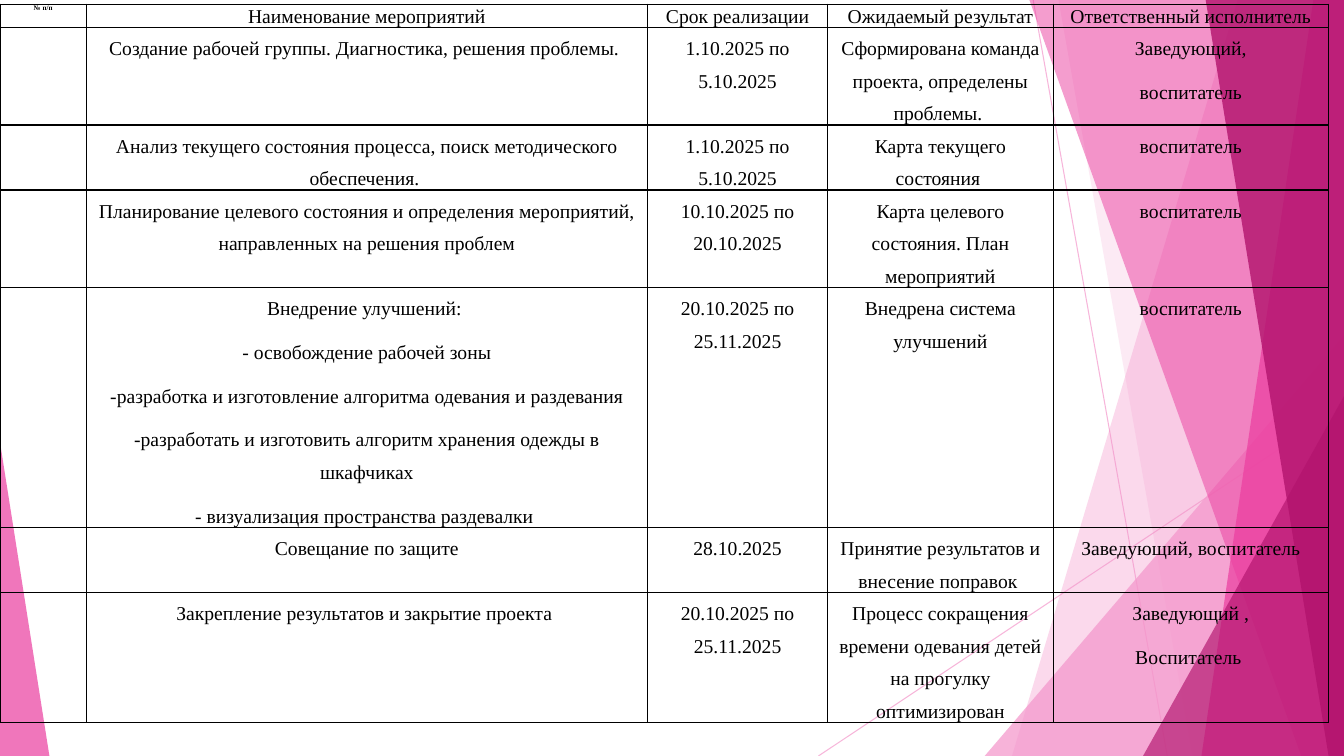
from lxml import etree
from pptx import Presentation
from pptx.dml.color import RGBColor
from pptx.enum.shapes import MSO_CONNECTOR, MSO_SHAPE
from pptx.enum.text import PP_ALIGN
from pptx.oxml.ns import qn
from pptx.util import Pt

CENTER = PP_ALIGN.CENTER
STRAIGHT = MSO_CONNECTOR.STRAIGHT
TRIANGLE = MSO_SHAPE.ISOSCELES_TRIANGLE

WIDE, HIGH, EDGE = 960, 540, -0.6
FONT = "Times New Roman"
BLACK, LIGHT, PINK, DARK = "000000", "F496CB", "EB3D9F", "B2136D"

# Table content: a tuple holds the paragraphs of one cell
HEAD = ["№ п/п", "Наименование мероприятий", "Срок реализации",
        "Ожидаемый результат", "Ответственный исполнитель"]
STEPS = [
    ["Создание рабочей группы. Диагностика, решения проблемы. ",
     "1.10.2025 по 5.10.2025",
     "Сформирована команда проекта, определены проблемы. ",
     ("Заведующий,", "воспитатель")],
    ["Анализ текущего состояния процесса, поиск методического обеспечения. ",
     "1.10.2025 по 5.10.2025", "Карта текущего состояния ", "воспитатель"],
    ["Планирование целевого состояния и определения мероприятий, "
     "направленных на решения проблем",
     "10.10.2025 по 20.10.2025",
     "Карта целевого состояния. План мероприятий", "воспитатель"],
    [("Внедрение улучшений: ",
      "- освобождение рабочей зоны",
      "-разработка и изготовление алгоритма одевания и раздевания",
      "-разработать и изготовить алгоритм хранения одежды в шкафчиках",
      "- визуализация пространства раздевалки "),
     "20.10.2025 по 25.11.2025", "Внедрена система улучшений", "воспитатель"],
    ["Совещание по защите", "28.10.2025",
     "Принятие результатов и внесение поправок ", "Заведующий, воспитатель"],
    ["Закрепление результатов и закрытие проекта ",
     "20.10.2025 по 25.11.2025",
     "Процесс сокращения времени одевания детей на прогулку оптимизирован",
     ("Заведующий ,", "Воспитатель ")],
]
COLS = [61.7, 400.8, 128.8, 161, 196.7]
ROWS = [16, 69, 46, 69, 171, 46, 92]
LEFT, TOP = 0, 3

# Backdrop, back to front
LINES = [(738, 0, 833.8, HIGH), (WIDE, 290, 584.6, HIGH)]
FACETS = [  # band: top x, bottom x; wedge: left, top, width, height, apex
    ("band", (884.2, 722.9), LIGHT, 36),
    ("band", (756, 851.8), LIGHT, 20),
    ("wedge", (703.4, 239.8, 256.6, 300.2, 1), LIGHT, 72),
    ("band", (735.1, 929.5), PINK, 50),
    ("band", (938.2, 858.2), PINK, 70),
    ("band", (861.1, 949), DARK, 80),
    ("wedge", (816.5, 283, 143.5, 257, 1), DARK, 66),
    ("wedge", (0, 316, 35.3, 224, 0), PINK, 70),
]


def paint(fill, color):
    fill.solid()
    fill.fore_color.rgb = RGBColor.from_string(color)


def fade(shape, percent):
    color = next(shape._element.spPr.iter(qn("a:srgbClr")))
    etree.SubElement(color, qn("a:alpha"), val=str(percent * 1000))


def write(cell, text, size=14, bold=False, space=1.5):
    frame = cell.text_frame
    parts = (text,) if isinstance(text, str) else text
    for i, part in enumerate(parts):
        para = frame.add_paragraph() if i else frame.paragraphs[0]
        para.alignment, para.line_spacing = CENTER, space
        para.space_after = Pt(8)
        run = para.add_run()
        run.text = part
        run.font.name, run.font.size, run.font.bold = FONT, Pt(size), bold
        paint(run.font.fill, BLACK)


def frame_cell(cell):
    cell.margin_left = cell.margin_right = Pt(2.2)
    cell.margin_top = cell.margin_bottom = 0
    props = cell._tc.get_or_add_tcPr()
    for side in ("lnL", "lnR", "lnT", "lnB"):
        line = etree.SubElement(props, qn("a:" + side), w=str(Pt(1)))
        solid = etree.SubElement(line, qn("a:solidFill"))
        etree.SubElement(solid, qn("a:srgbClr"), val=BLACK)
    cell.fill.background()


def band(shapes, top, base):
    pen = shapes.build_freeform(Pt(top), Pt(EDGE), scale=1)
    pen.add_line_segments([(Pt(WIDE), Pt(EDGE)), (Pt(WIDE), Pt(HIGH)),
                           (Pt(base), Pt(HIGH))], close=True)
    return pen.convert_to_shape()


def wedge(shapes, left, top, width, height, apex):
    shape = shapes.add_shape(TRIANGLE, Pt(left), Pt(top), Pt(width), Pt(height))
    shape.adjustments[0] = apex
    return shape


def backdrop(shapes):
    for ends in LINES:
        line = shapes.add_connector(STRAIGHT, *map(Pt, ends))
        line.line.width = Pt(0.75)
        paint(line.line.fill, LIGHT)
        fade(line, 70)
        etree.SubElement(line._element.spPr, qn("a:effectLst"))
    for kind, place, color, percent in FACETS:
        draw = band if kind == "band" else wedge
        shape = draw(shapes, *place)
        shape.shadow.inherit = False
        shape.line.fill.background()
        paint(shape.fill, color)
        fade(shape, percent)


def plan(shapes):
    grid = shapes.add_table(len(ROWS), len(COLS), Pt(LEFT), Pt(TOP),
                            Pt(sum(COLS)), Pt(sum(ROWS))).table
    grid.first_row = grid.horz_banding = False
    for col, width in zip(grid.columns, COLS):
        col.width = Pt(width)
    for row, height in zip(grid.rows, ROWS):
        row.height = Pt(height)
    for cell in grid.iter_cells():
        frame_cell(cell)
    for c, text in enumerate(HEAD):
        look = {"size": 5, "bold": True} if c == 0 else {}
        write(grid.cell(0, c), text, space=1.07, **look)
    for r, step in enumerate(STEPS, 1):
        for c, text in enumerate(step, 1):
            write(grid.cell(r, c), text)


def main():
    deck = Presentation()
    deck.slide_width, deck.slide_height = Pt(WIDE), Pt(HIGH)
    slide = deck.slides.add_slide(deck.slide_layouts[6])
    paint(slide.background.fill, "FFFFFF")
    backdrop(slide.shapes)
    plan(slide.shapes)
    deck.save("out.pptx")


if __name__ == "__main__":
    main()
